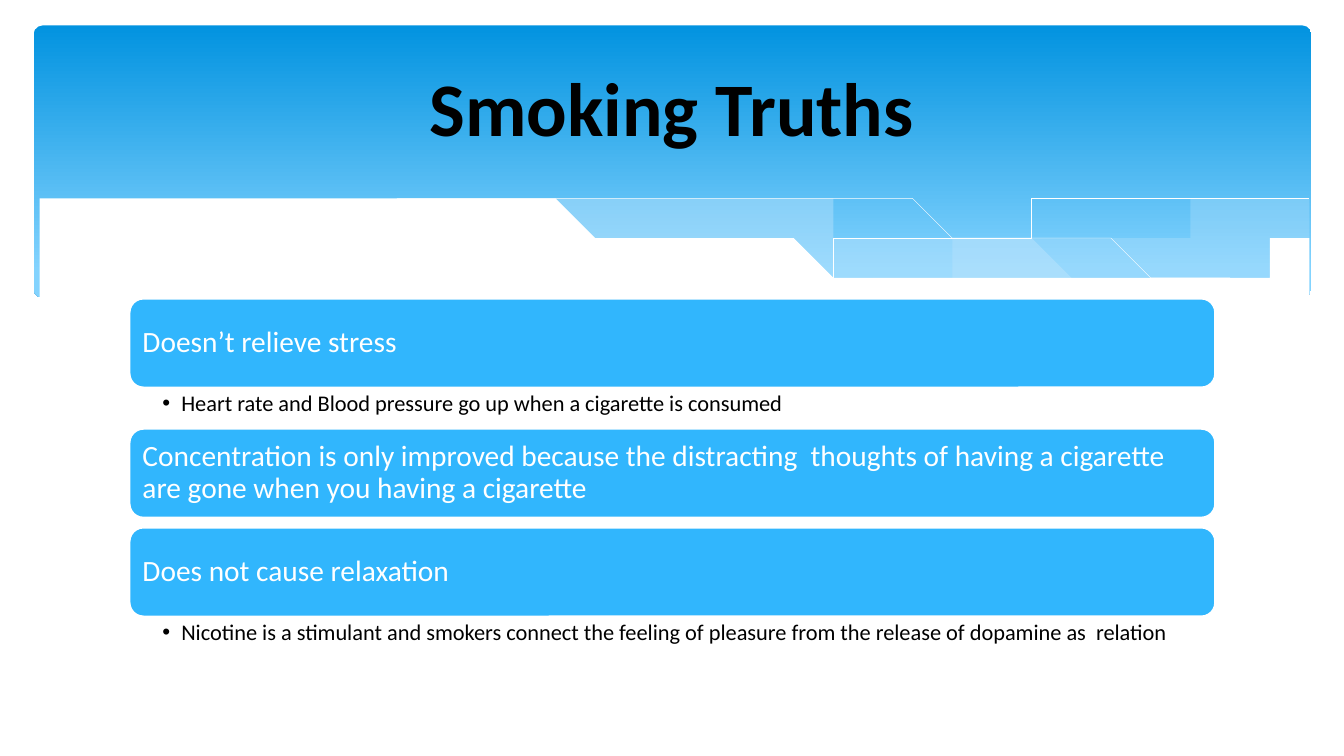
import pptx
import pptx.dml.color
import pptx.enum.shapes
import pptx.enum.text
import pptx.oxml
import pptx.oxml.ns
import pptx.util
from pptx.util import Cm

FONT = "Calibri"

# Wave curves in centimetres from the banner's top left corner
RIGHT_SWELL = [
    [(32.2, 4.44), (30.32, 4.69), (28.28, 5.02), (25.52, 5.51), (23.05, 5.89), (21.55, 6.09)],
    [(21.55, 6.09), (23.48, 6.27), (26.35, 6.42), (28.39, 6.35), (30.34, 6.09), (32.2, 5.63)],
]
LONG_SWELL = [
    [(8.85, 4.21), (10.25, 4.11), (12, 4.06), (14.11, 4.16), (16.57, 4.39), (18.91, 4.72),
     (20.46, 5), (23.05, 5.46), (25.41, 5.81), (27.5, 6.09), (29.38, 6.29)],
    [(29.38, 6.29), (27.88, 6.4), (26.1, 6.42), (23.61, 6.32), (20.64, 5.99), (17.08, 5.46),
     (14.36, 5), (12.13, 4.62), (10.1, 4.34), (8.85, 4.21)],
]
FALLING_LINE = [
    [(9.61, 4.31), (11.09, 4.16), (12.74, 4.11), (15.03, 4.16), (17.18, 4.29),
     (19.75, 4.54), (22.7, 4.92), (26.07, 5.48), (29.88, 6.27)],
]
RISING_LINE = [
    [(19.93, 5.89), (22.7, 5.33), (25.44, 4.85), (28.49, 4.41), (30.44, 4.19), (32.17, 4.06)],
]
WHITE_WAVE = [
    [(32.25, 5.61), (30.32, 6.09), (27.95, 6.35), (26.02, 6.38), (23.76, 6.27), (21.07, 6.01),
     (17.95, 5.58), (14.29, 4.95), (11.49, 4.49), (9.06, 4.19), (6.92, 4.06), (5.12, 4.03),
     (3.62, 4.08), (2.02, 4.26), (0.9, 4.47), (-0.06, 4.77)],
    [(-0.06, 7.72), (32.25, 7.72)],
]

TRUTHS = [
    ("Doesn’t relieve stress",
     "Heart rate and Blood pressure go up when a cigarette is consumed"),
    ("Concentration is only improved because the distracting  thoughts of having a cigarette "
     "are gone when you having a cigarette", None),
    ("Does not cause relaxation",
     "Nicotine is a stimulant and smokers connect the feeling of pleasure from the release "
     "of dopamine as  relation"),
]


def color(hex_string):
    return pptx.dml.color.RGBColor.from_string(hex_string)


def smooth_curve(points, steps=6):
    """Catmull-Rom curve through the points."""
    padded = [points[0], *points, points[-1]]
    curve = [points[0]]
    for a, b, c, d in zip(padded, padded[1:], padded[2:], padded[3:]):
        for step in range(1, steps + 1):
            t = step / steps
            curve.append(tuple(
                (2 * q + (r - p) * t + (2 * p - 5 * q + 4 * r - s) * t ** 2
                 + (3 * q - p - 3 * r + s) * t ** 3) / 2
                for p, q, r, s in zip(a, b, c, d)))
    return curve


def add_wave(slide, left, top, curves, fill=None, opacity=100):
    """Filled wave, or a thin white line when no fill is given."""
    points = [(left + x, top + y) for curve in curves for x, y in smooth_curve(curve)]
    builder = slide.shapes.build_freeform(*points[0], scale=Cm(1))
    builder.add_line_segments(points[1:], close=fill is not None)
    wave = builder.convert_to_shape()
    wave.shadow.inherit = False
    if fill is None:
        wave.fill.background()
        wave.line.color.rgb = color("FFFFFF")
        wave.line.width = pptx.util.Pt(0.25)
        return
    wave.line.fill.background()
    wave.fill.solid()
    wave.fill.fore_color.rgb = color(fill)
    if opacity < 100:
        rgb = wave.element.spPr.find(".//" + pptx.oxml.ns.qn("a:srgbClr"))
        alpha = pptx.oxml.parse_xml(
            f'<a:alpha {pptx.oxml.ns.nsdecls("a")} val="{opacity * 1000}"/>')
        rgb.append(alpha)


def add_banner(slide, left, top, width, height):
    # Gradient panel
    panel = slide.shapes.add_shape(
        pptx.enum.shapes.MSO_SHAPE.ROUNDED_RECTANGLE, Cm(left), Cm(top), Cm(width), Cm(height))
    panel.adjustments[0] = 0.034
    panel.shadow.inherit = False
    panel.line.fill.background()
    panel.fill.gradient()
    panel.fill.gradient_angle = 270
    stops = panel.fill.gradient_stops
    for stop, position, shade in zip(stops, (0, 0.9), ("0293E0", "83D3FE")):
        stop.position = position
        stop.color.rgb = color(shade)
    # Waves
    add_wave(slide, left, top, RIGHT_SWELL, "C6E7FC", 29)
    add_wave(slide, left, top, LONG_SWELL, "C6E7FC", 40)
    add_wave(slide, left, top, FALLING_LINE)
    add_wave(slide, left, top, RISING_LINE)
    add_wave(slide, left, top, WHITE_WAVE, "FFFFFF")


def write_text(shape, text, size, shade, anchor, insets):
    frame = shape.text_frame
    frame.text = text
    frame.word_wrap = True
    frame.auto_size = pptx.enum.text.MSO_AUTO_SIZE.NONE
    frame.vertical_anchor = anchor
    frame.margin_left, frame.margin_top, frame.margin_right, frame.margin_bottom = map(Cm, insets)
    paragraph = frame.paragraphs[0]
    paragraph.alignment = pptx.enum.text.PP_ALIGN.LEFT
    paragraph.line_spacing = 0.9
    paragraph.space_before = pptx.util.Pt(0)
    paragraph.font.name = FONT
    paragraph.font.size = pptx.util.Pt(size)
    paragraph.font.color.rgb = color(shade)
    return paragraph


def place(shape, left, top, width, height):
    shape.left, shape.top, shape.width, shape.height = map(Cm, (left, top, width, height))


def add_title(slide, left, top, width, height):
    title = slide.shapes.title
    place(title, left, top, width, height)
    paragraph = write_text(title, "Smoking Truths", 54, "000000",
                           pptx.enum.text.MSO_ANCHOR.MIDDLE, (0.25, 0.13, 0.25, 0.13))
    paragraph.alignment = pptx.enum.text.PP_ALIGN.CENTER
    paragraph.line_spacing = 1
    paragraph.font.bold = True
    # Bring the title in front of the banner
    slide.shapes.element.append(title.element)


def add_truths(slide, left, top, width):
    bar_height, detail_height, gap = 2.31, 0.97, 0.18
    details = iter([holder for holder in slide.placeholders
                    if holder.placeholder_format.idx in (1, 2)])
    for heading, detail in TRUTHS:
        # Heading bar
        bar = slide.shapes.add_shape(
            pptx.enum.shapes.MSO_SHAPE.ROUNDED_RECTANGLE,
            Cm(left), Cm(top), Cm(width), Cm(bar_height))
        bar.shadow.inherit = False
        bar.fill.solid()
        bar.fill.fore_color.rgb = color("31B6FD")
        bar.line.color.rgb = color("FFFFFF")
        bar.line.width = pptx.util.Pt(3.35)
        write_text(bar, heading, 21, "FFFFFF", pptx.enum.text.MSO_ANCHOR.MIDDLE,
                   (0.25, 0.25, 0.25, 0.25))
        top += bar_height
        if detail is None:
            top += gap
            continue
        # Bulleted detail under the bar
        holder = next(details)
        place(holder, left, top, width, detail_height)
        paragraph = write_text(holder, detail, 16, "000000", pptx.enum.text.MSO_ANCHOR.TOP,
                               (0.86, 0.08, 0.41, 0.08))
        properties = paragraph._p.get_or_add_pPr()
        properties.set("marL", str(Cm(0.48)))
        properties.set("indent", str(-Cm(0.48)))
        properties.append(pptx.oxml.parse_xml(
            f'<a:buChar {pptx.oxml.ns.nsdecls("a")} char="•"/>'))
        # Keep the bullet ahead of the default run properties
        properties.append(properties.find(pptx.oxml.ns.qn("a:defRPr")))
        top += detail_height


def main():
    presentation = pptx.Presentation()
    presentation.slide_width = Cm(33.87)
    presentation.slide_height = Cm(19.05)
    slide = presentation.slides.add_slide(presentation.slide_layouts[3])
    add_banner(slide, 0.85, 0.64, 32.2, 6.86)
    add_truths(slide, 3.23, 7.49, 27.43)
    add_title(slide, 1.69, 0.94, 30.48, 3.48)
    presentation.save("out.pptx")


if __name__ == "__main__":
    main()
